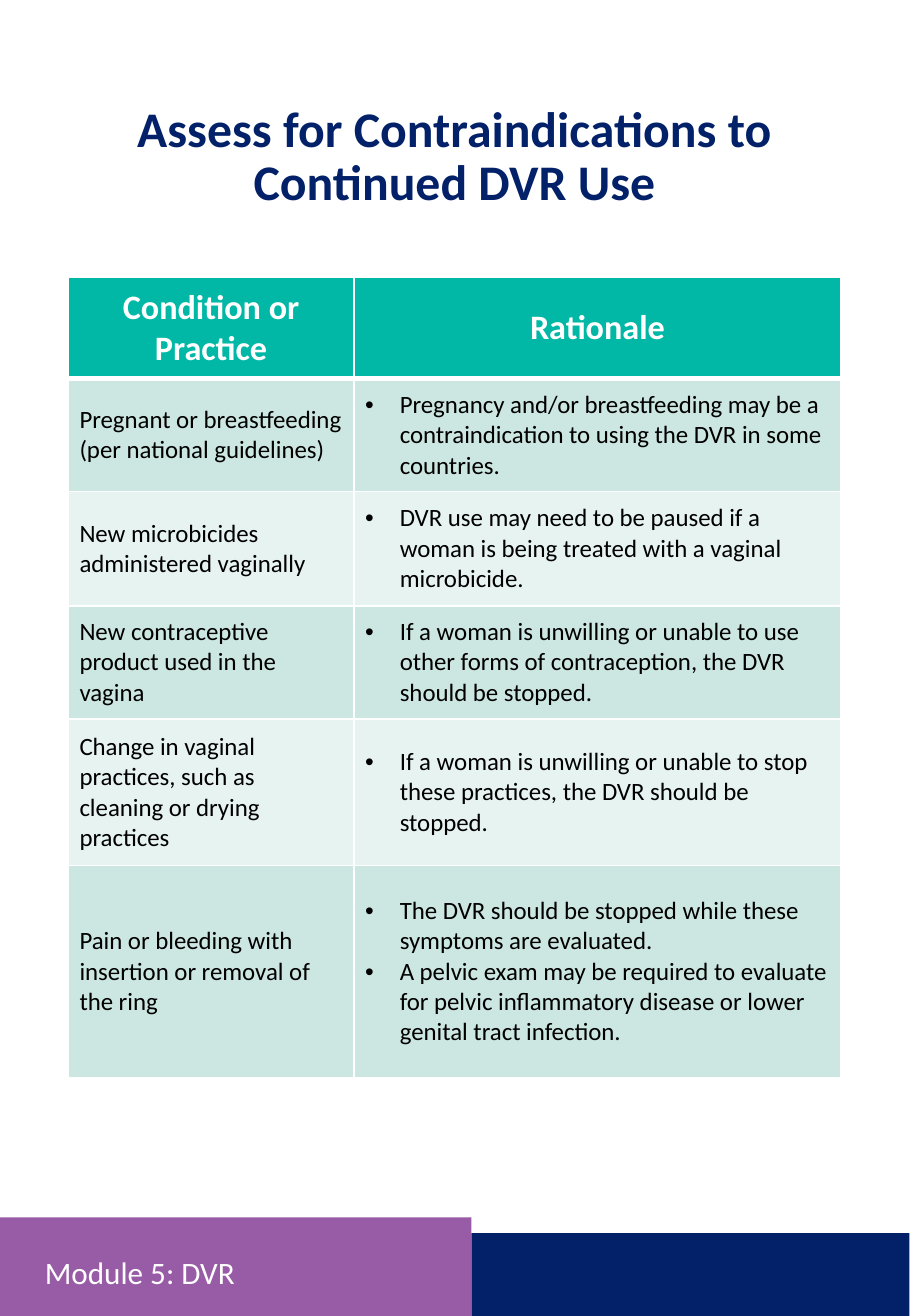
from lxml.etree import SubElement
from pptx import Presentation
from pptx.dml.color import RGBColor
from pptx.enum.shapes import MSO_SHAPE
from pptx.enum.text import MSO_ANCHOR as ANCHOR, MSO_AUTO_SIZE as AUTO, PP_ALIGN as ALIGN
from pptx.oxml.ns import qn
from pptx.util import Inches, Pt

NAVY = RGBColor(0x02, 0x21, 0x69)
PURPLE = RGBColor(0x97, 0x5C, 0xA5)
TEAL = RGBColor(0x00, 0xB8, 0xA5)
MINT = RGBColor(0xCC, 0xE6, 0xE1)
PALE = RGBColor(0xE7, 0xF3, 0xF0)
WHITE = RGBColor(0xFF, 0xFF, 0xFF)
BLACK = RGBColor(0x00, 0x00, 0x00)
FONT = "Calibri"

HEADERS = ["Condition or Practice", "Rationale"]
CONDITIONS = [
    ("Pregnant or breastfeeding (per national guidelines)",
     ["Pregnancy and/or breastfeeding may be a contraindication to using the DVR "
      "in some countries."]),
    ("New microbicides administered vaginally",
     ["DVR use may need to be paused if a woman is being treated with a vaginal "
      "microbicide."]),
    ("New contraceptive product used in the vagina",
     ["If a woman is unwilling or unable to use other forms of contraception, "
      "the DVR should be stopped."]),
    ("Change in vaginal practices, such as cleaning or drying practices",
     ["If a woman is unwilling or unable to stop these practices, the DVR should "
      "be stopped."]),
    ("Pain or bleeding with insertion or removal of the ring",
     ["The DVR should be stopped while these symptoms are evaluated.",
      "A pelvic exam may be required to evaluate for pelvic inflammatory disease "
      "or lower genital tract infection."]),
]
COL_WIDTHS = [2.55, 4.35]
ROW_HEIGHTS = [0.9, 1.01, 1.02, 1.01, 1.31, 1.89]


def add_run(p, text, size, color, bold=False):
    """Add one formatted run to a paragraph."""
    r = p.add_run()
    r.text = text
    r.font.name, r.font.size, r.font.bold = FONT, Pt(size), bold
    r.font.color.rgb = color


def set_bullet(p, char=None, indent=0):
    """Give a paragraph a hanging bullet, or none when no character is given."""
    pPr = p._p.get_or_add_pPr()
    pPr.set("marL", str(Inches(indent)))
    pPr.set("indent", str(-Inches(indent)))
    if char:
        SubElement(pPr, qn("a:buFont"), typeface="Arial")
        SubElement(pPr, qn("a:buChar"), char=char)
    else:
        SubElement(pPr, qn("a:buNone"))


def add_band(s, left, top, width, height, color):
    """Draw a plain footer band."""
    sp = s.shapes.add_shape(MSO_SHAPE.RECTANGLE, Inches(left), Inches(top),
                            Inches(width), Inches(height))
    sp.shadow.inherit = False
    sp.fill.solid()
    sp.fill.fore_color.rgb = color
    sp.line.fill.background()


def fill_placeholder(sp, box, text, size, color, align, anchor, bold=False):
    """Move a placeholder to the front and write one paragraph in it."""
    sp.left, sp.top, sp.width, sp.height = map(Inches, box)
    sp.element.getparent().append(sp.element)
    tf = sp.text_frame
    tf.word_wrap, tf.auto_size, tf.vertical_anchor = True, AUTO.NONE, anchor
    p = tf.paragraphs[0]
    p.alignment, p.line_spacing, p.space_before = align, 0.9, Pt(0)
    set_bullet(p)
    add_run(p, text, size, color, bold)


def style_cell(cell, color, top=1, bottom=1):
    """Set a cell's white borders, fill and middle anchor."""
    tcPr = cell._tc.get_or_add_tcPr()
    for side, width in (("L", 1), ("R", 1), ("T", top), ("B", bottom)):
        ln = SubElement(tcPr, qn(f"a:ln{side}"), w=str(Pt(width)))
        SubElement(SubElement(ln, qn("a:solidFill")), qn("a:srgbClr"), val=str(WHITE))
    cell.fill.solid()
    cell.fill.fore_color.rgb = color
    cell.vertical_anchor = ANCHOR.MIDDLE


def write_header(cell, text):
    """Write a centred column heading."""
    style_cell(cell, TEAL, bottom=3)
    cell.margin_left = cell.margin_right = Inches(0.07)
    cell.margin_top = cell.margin_bottom = Inches(0.04)
    p = cell.text_frame.paragraphs[0]
    p.alignment = ALIGN.CENTER
    add_run(p, text, 22, WHITE, bold=True)


def write_cell(cell, lines, row, bulleted):
    """Write the paragraphs of a body cell, with bullets if asked."""
    style_cell(cell, MINT if row % 2 else PALE, top=3 if row == 1 else 1)
    tf = cell.text_frame
    for i, line in enumerate(lines):
        p = tf.add_paragraph() if i else tf.paragraphs[0]
        if bulleted:
            set_bullet(p, "•", 0.31)
        add_run(p, line, 16, BLACK)


def add_conditions_table(s):
    """Build the table of conditions and rationales."""
    table = s.shapes.add_table(len(ROW_HEIGHTS), len(COL_WIDTHS), Inches(0.61), Inches(2.48),
                               Inches(sum(COL_WIDTHS)), Inches(sum(ROW_HEIGHTS))).table
    for col, width in zip(table.columns, COL_WIDTHS):
        col.width = Inches(width)
    for row, height in zip(table.rows, ROW_HEIGHTS):
        row.height = Inches(height)
    for c, text in enumerate(HEADERS):
        write_header(table.cell(0, c), text)
    for r, (condition, rationale) in enumerate(CONDITIONS, 1):
        write_cell(table.cell(r, 0), [condition], r, bulleted=False)
        write_cell(table.cell(r, 1), rationale, r, bulleted=True)


def main():
    """Build and save the slide."""
    prs = Presentation()
    prs.slide_width, prs.slide_height = Inches(8.125), Inches(11.75)
    s = prs.slides.add_slide(prs.slide_layouts[1])
    add_band(s, 4.21, 11.01, 3.91, 0.75, NAVY)
    add_band(s, 0, 10.87, 4.21, 0.89, PURPLE)
    fill_placeholder(s.placeholders[1], (0.61, 0.88, 6.9, 0.98),
                     "Assess for Contraindications to Continued DVR Use",
                     32, NAVY, ALIGN.CENTER, ANCHOR.TOP, bold=True)
    add_conditions_table(s)
    fill_placeholder(s.shapes.title, (0.3, 11.13, 3.59, 0.5), "Module 5: DVR",
                     20, WHITE, ALIGN.LEFT, ANCHOR.MIDDLE)
    prs.save("out.pptx")


if __name__ == "__main__":
    main()
